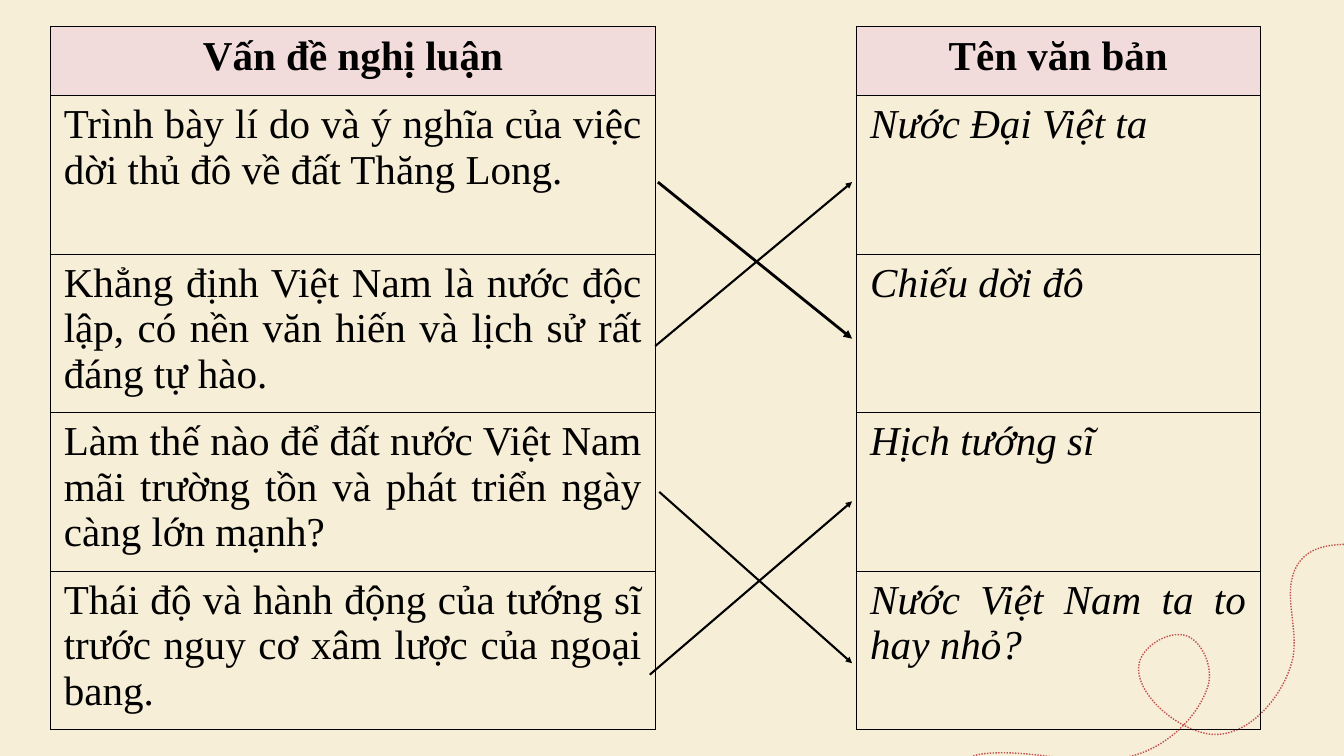
from lxml.etree import SubElement
from pptx import Presentation
from pptx.dml.color import RGBColor
from pptx.enum.dml import MSO_LINE
from pptx.enum.shapes import MSO_CONNECTOR
from pptx.enum.text import PP_ALIGN
from pptx.oxml import parse_xml
from pptx.oxml.ns import nsdecls, qn
from pptx.util import Inches, Pt

COLORS = {"background": "F7EED7", "header": "F2DCDB", "ink": "000000", "trail": "C0504D"}
FONT = "Times New Roman"
HEADERS = ("Vấn đề nghị luận", "Tên văn bản")
ROWS = [
    ("Trình bày lí do và ý nghĩa của việc dời thủ đô về đất Thăng Long.", "Nước Đại Việt ta"),
    ("Khẳng định Việt Nam là nước độc lập, có nền văn hiến và lịch sử rất đáng tự hào.",
     "Chiếu dời đô"),
    ("Làm thế nào để đất nước Việt Nam mãi trường tồn và phát triển ngày càng lớn mạnh?",
     "Hịch tướng sĩ"),
    ("Thái độ và hành động của tướng sĩ trước nguy cơ xâm lược của ngoại bang.",
     "Nước Việt Nam ta to hay nhỏ?"),
]
# Start point, then two control points and an end point for each curve
TRAIL = [
    (13.7, 12.15), (13.97, 11.81), (14.18, 11.27), (14.61, 11.22),
    (15.33, 11.13), (16.09, 11.42), (16.8, 11.26),
    (17.31, 11.15), (17.8, 10.72), (17.97, 10.23),
    (18.06, 9.98), (17.93, 9.61), (17.7, 9.48),
    (17.47, 9.36), (17.11, 9.55), (16.99, 9.77),
    (16.74, 10.24), (17.57, 10.94), (18.1, 10.93),
    (18.62, 10.92), (19.08, 10.36), (19.22, 9.87),
    (19.36, 9.4), (19.06, 8.84), (19.3, 8.42),
    (19.61, 7.88), (20.54, 8.19), (21.17, 8.19),
    (21.52, 8.18), (21.85, 7.92), (22.1, 7.68),
    (22.27, 7.51), (22.56, 7.35), (22.53, 7.12),
]
ARROW_TIP_X = 12.68
# Start x, start y, end y, line width
ARROWS = [
    (9.79, 2.71, 5.04, 3),
    (9.67, 10.04, 7.46, 2.25),
    (9.75, 5.15, 2.71, 2.25),
    (9.81, 7.32, 9.87, 2.25),
]


def write_cell(cell, text, align=PP_ALIGN.JUSTIFY, bold=False, italic=False):
    cell.margin_left = cell.margin_right = Inches(0.2)
    cell.margin_top = cell.margin_bottom = Inches(0.1)
    para = cell.text_frame.paragraphs[0]
    para.alignment = align
    span = para.add_run()
    span.text = text
    span.font.name, span.font.size = FONT, Pt(44)
    span.font.bold, span.font.italic = bold, italic
    span.font.color.rgb = RGBColor.from_string(COLORS["ink"])


def set_borders(cell, visible_sides):
    """Draw thin lines on the given sides (letters of LRTB) and none on the others."""
    properties = cell._tc.get_or_add_tcPr()
    for index, side in enumerate("LRTB"):
        paint = "<a:noFill/>"
        if side in visible_sides:
            paint = f'<a:solidFill><a:srgbClr val="{COLORS["ink"]}"/></a:solidFill>'
        properties.insert(index, parse_xml(
            f'<a:ln{side} {nsdecls("a")} w="{Pt(1)}">{paint}</a:ln{side}>'))


deck = Presentation()
deck.slide_width, deck.slide_height = Inches(20), Inches(11.25)
page = deck.slides.add_slide(deck.slide_layouts[6])
page.background.fill.solid()
page.background.fill.fore_color.rgb = RGBColor.from_string(COLORS["background"])

# Dotted trail: outline the points, then turn each three segments into a curve
points = [(round(x * 100), round(y * 100)) for x, y in TRAIL]
builder = page.shapes.build_freeform(*points[0], scale=Inches(0.01))
builder.add_line_segments(points[1:], close=False)
trail = builder.convert_to_shape()
trail.shadow.inherit = False
trail.fill.background()
trail.line.color.rgb = RGBColor.from_string(COLORS["trail"])
trail.line.width = Pt(1.5)
trail.line.dash_style = MSO_LINE.ROUND_DOT
outline = next(trail._element.iter(qn("a:path")))
segments = outline.findall(qn("a:lnTo"))
for first in range(0, len(segments), 3):
    curve = SubElement(outline, qn("a:cubicBezTo"))
    for segment in segments[first:first + 3]:
        curve.append(segment[0])
        outline.remove(segment)

# Matching table with an open column for the arrows
table = page.shapes.add_table(
    len(ROWS) + 1, 3, Inches(0.75), Inches(0.4), Inches(18), Inches(10.46)).table
table.first_row = table.horz_banding = False
for column, width in zip(table.columns, (9.01, 2.99, 6)):
    column.width = Inches(width)
for index, row in enumerate(table.rows):
    row.height = Inches(2.36 if index else 1.02)
    for column, cell in enumerate(row.cells):
        if index == 0 and column != 1:
            cell.fill.solid()
            cell.fill.fore_color.rgb = RGBColor.from_string(COLORS["header"])
        else:
            cell.fill.background()
        set_borders(cell, "LR" if column == 1 else "LRTB")
table.cell(0, 1).merge(table.cell(len(ROWS), 1))

for column, text in zip((0, 2), HEADERS):
    write_cell(table.cell(0, column), text, align=PP_ALIGN.CENTER, bold=True)
for index, (issue, title) in enumerate(ROWS, start=1):
    write_cell(table.cell(index, 0), issue)
    write_cell(table.cell(index, 2), title, italic=True)

for start_x, start_y, end_y, width in ARROWS:
    arrow = page.shapes.add_connector(
        MSO_CONNECTOR.STRAIGHT, Inches(start_x), Inches(start_y),
        Inches(ARROW_TIP_X), Inches(end_y))
    arrow.line.color.rgb = RGBColor.from_string(COLORS["ink"])
    arrow.line.width = Pt(width)
    SubElement(arrow.line._get_or_add_ln(), qn("a:tailEnd"), type="triangle")
    SubElement(arrow._element.spPr, qn("a:effectLst"))

deck.save("out.pptx")
